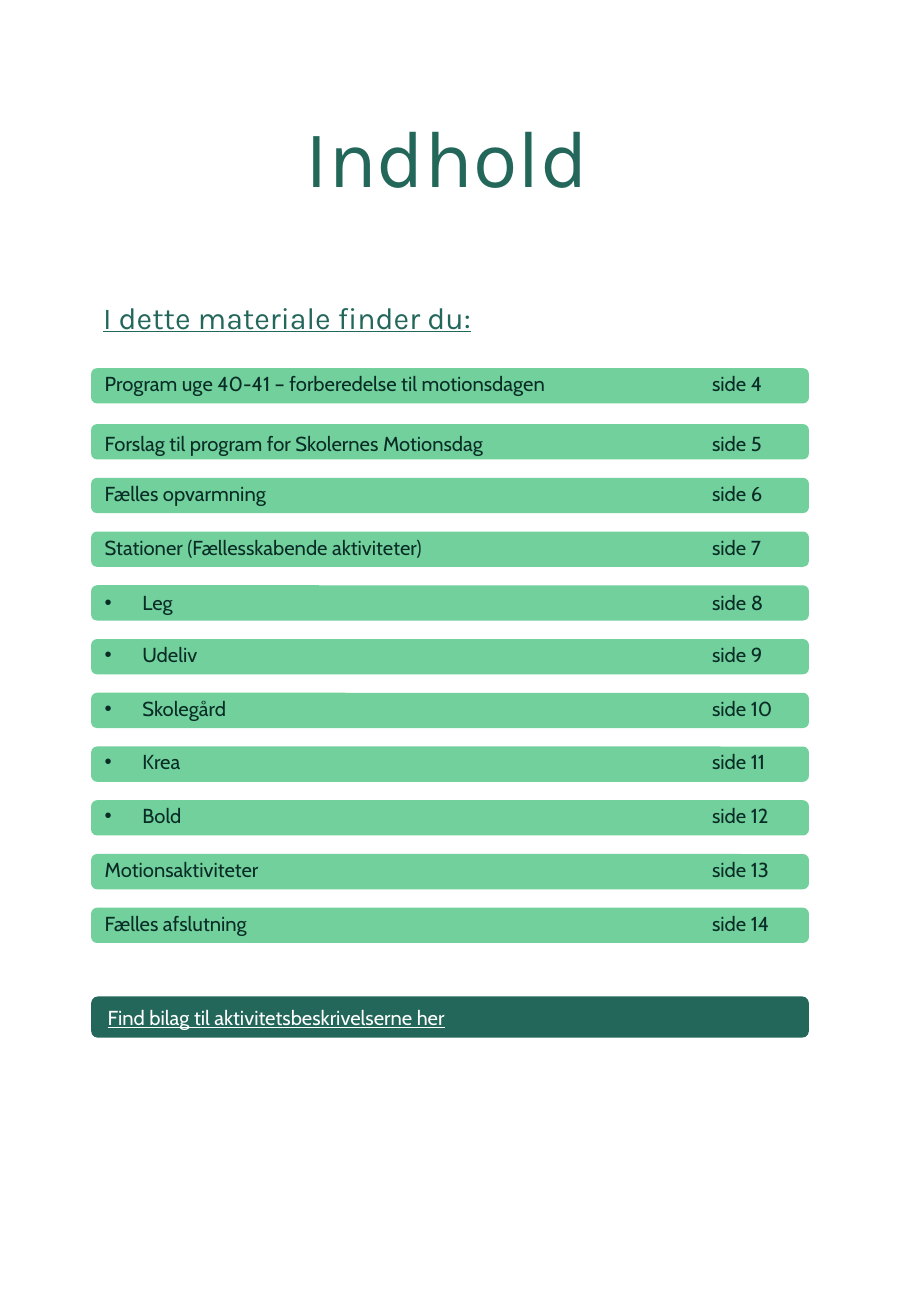
from lxml.etree import SubElement
from pptx import Presentation
from pptx.dml.color import RGBColor
from pptx.enum.shapes import MSO_SHAPE
from pptx.enum.text import MSO_ANCHOR, PP_ALIGN
from pptx.oxml.ns import qn
from pptx.util import Inches, Pt

DARK_GREEN, LIGHT_GREEN, INK, WHITE = "23675B", "25B768", "092D26", "FFFFFF"
BAR_LEFT, BAR_WIDTH, BAR_HEIGHT = 0.75, 5.91, 0.29
FIRST_TOP, SECOND_TOP, LAST_TOP = 3.03, 3.49, 7.47
PAGE_TAB, BULLET_INDENT = 5, 0.31
TOP, MIDDLE, BOTTOM = MSO_ANCHOR.TOP, MSO_ANCHOR.MIDDLE, MSO_ANCHOR.BOTTOM
CONTENTS = [
    ("Program uge 40-41 – forberedelse til motionsdagen", 4, False, BOTTOM),
    ("Forslag til program for Skolernes Motionsdag", 5, False, TOP),
    ("Fælles opvarmning", 6, False, BOTTOM),
    ("Stationer (Fællesskabende aktiviteter)", 7, False, BOTTOM),
    ("Leg", 8, True, MIDDLE),
    ("Udeliv", 9, True, BOTTOM),
    ("Skolegård", 10, True, BOTTOM),
    ("Krea", 11, True, BOTTOM),
    ("Bold", 12, True, BOTTOM),
    ("Motionsaktiviteter", 13, False, BOTTOM),
    ("Fælles afslutning", 14, False, BOTTOM),
]


def color(hex_code):
    """Return the colour for a hex string."""
    return RGBColor.from_string(hex_code)


def write(shape, text, font_name, size, hex_code, anchor=TOP, align=PP_ALIGN.LEFT, underline=False):
    """Put one formatted line of text in a shape."""
    frame = shape.text_frame
    frame.word_wrap = True
    frame.vertical_anchor = anchor
    paragraph = frame.paragraphs[0]
    paragraph.text = text
    paragraph.alignment = align
    for run in paragraph.runs:
        run.font.name = font_name
        run.font.size = Pt(size)
        run.font.underline = underline
        run.font.color.rgb = color(hex_code)


def add_bar(slide, left, top, width, height, hex_code):
    """Draw a rounded bar without outline."""
    bar = slide.shapes.add_shape(
        MSO_SHAPE.ROUNDED_RECTANGLE, Inches(left), Inches(top), Inches(width), Inches(height))
    bar.shadow.inherit = False
    bar.fill.solid()
    bar.fill.fore_color.rgb = color(hex_code)
    bar.line.fill.background()
    return bar


def add_title(slide, left, top, width, height):
    """Place the page title."""
    title = slide.shapes.title
    title.left, title.top, title.width, title.height = map(Inches, (left, top, width, height))
    write(title, "Indhold", "Karla", 48, DARK_GREEN, align=PP_ALIGN.CENTER)


def add_subtitle(slide, left, top, width, height):
    """Place the underlined line above the contents."""
    subtitle = slide.shapes.add_textbox(*map(Inches, (left, top, width, height)))
    write(subtitle, "I dette materiale finder du:", "Karla", 18, DARK_GREEN, underline=True)


def add_entry(slide, left, top, width, height, topic, page, bulleted, anchor):
    """Draw one contents entry with its page number at a tab stop."""
    entry = add_bar(slide, left, top, width, height, LIGHT_GREEN)
    fill_color = entry.fill._xPr.find(qn("a:solidFill"))[0]
    SubElement(fill_color, qn("a:alpha"), val="65000")
    properties = entry.text_frame.paragraphs[0]._p.get_or_add_pPr()
    if bulleted:
        properties.set("marL", str(Inches(BULLET_INDENT)))
        properties.set("indent", str(-Inches(BULLET_INDENT)))
        SubElement(properties, qn("a:buFont"), typeface="Arial")
        SubElement(properties, qn("a:buChar"), char="•")
    tabs = SubElement(properties, qn("a:tabLst"))
    SubElement(tabs, qn("a:tab"), pos=str(Inches(PAGE_TAB)), algn="l")
    write(entry, f"{topic}\tside {page}", "Cabin", 12, INK, anchor)


def add_contents(slide, left, width, height):
    """Stack the entries, evenly spaced from the second one on."""
    pitch = (LAST_TOP - SECOND_TOP) / (len(CONTENTS) - 2)
    for index, entry in enumerate(CONTENTS):
        top = SECOND_TOP + (index - 1) * pitch if index else FIRST_TOP
        add_entry(slide, left, top, width, height, *entry)


def add_appendix(slide, left, top, width, height):
    """Draw the dark bar pointing to the appendices."""
    appendix = add_bar(slide, left, top, width, height, DARK_GREEN)
    appendix.text_frame.margin_left = Inches(0.12)
    write(appendix, "Find bilag til aktivitetsbeskrivelserne her", "Cabin", 12, WHITE,
          MIDDLE, underline=True)


def main():
    """Build and save the contents page."""
    presentation = Presentation()
    presentation.slide_width = Inches(7.5)
    presentation.slide_height = Inches(10.83)
    slide = presentation.slides.add_slide(presentation.slide_layouts[5])
    add_title(slide, 0, 0.83, 7.36, 0.91)
    add_subtitle(slide, BAR_LEFT, 2.41, 6.71, 0.4)
    add_contents(slide, BAR_LEFT, BAR_WIDTH, BAR_HEIGHT)
    add_appendix(slide, BAR_LEFT, 8.2, BAR_WIDTH, 0.34)
    presentation.save("out.pptx")


if __name__ == "__main__":
    main()
